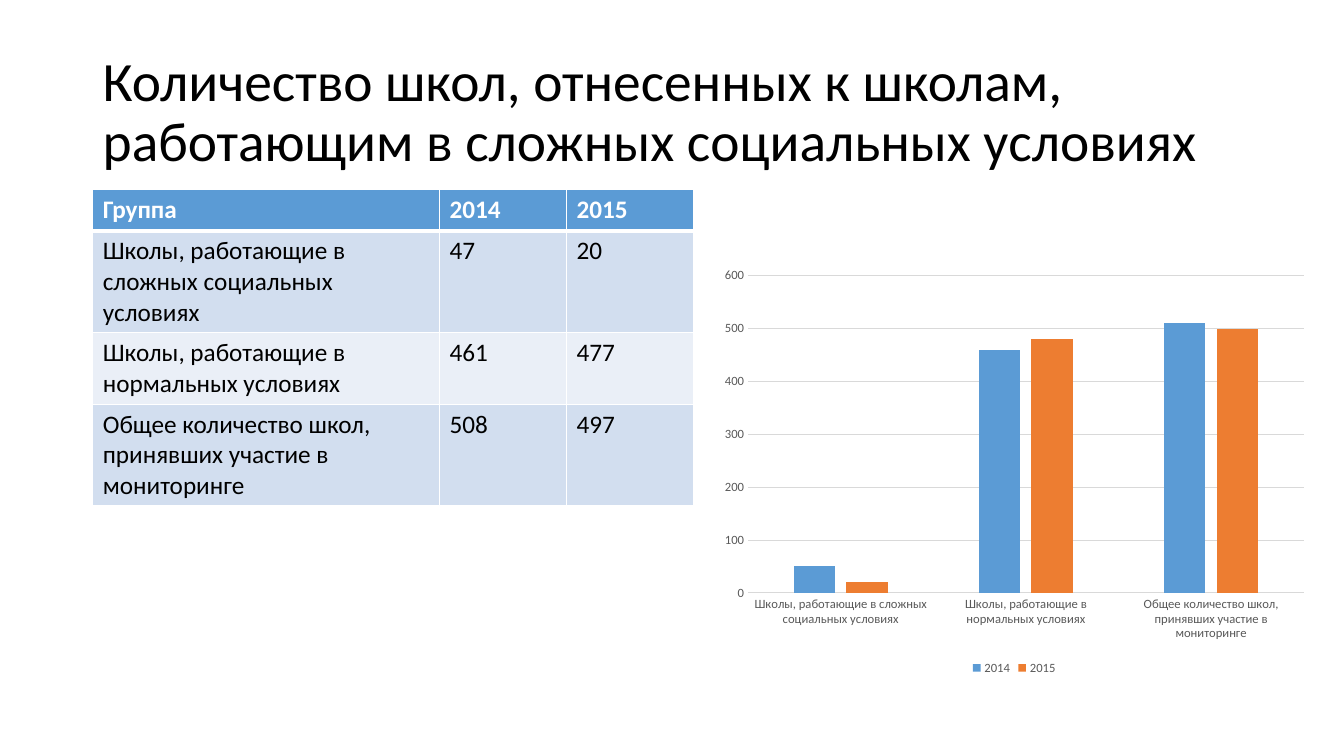
"""Build a slide with a table and a column chart of school counts by year."""
from lxml import etree
from pptx import Presentation
from pptx import util as u
from pptx.chart.data import CategoryChartData
from pptx.dml.color import RGBColor
from pptx.enum import chart as ch, text as tx
from pptx.oxml.ns import qn

FONT = "Calibri"
HEX = {"blue": "5B9BD5", "orange": "ED7D31", "band": "D2DEEF", "pale": "EAEFF7",
       "ink": "000000", "white": "FFFFFF", "gray": "595959", "grid": "D9D9D9"}
TITLE = "Количество школ, отнесенных к школам, работающим в сложных социальных условиях"
HEAD = ("Группа", "2014", "2015")
DATA = [
    ("Школы, работающие в сложных социальных условиях", 47, 20),
    ("Школы, работающие в нормальных условиях", 461, 477),
    ("Общее количество школ, принявших участие в мониторинге", 508, 497),
]
WIDE, HIGH = 13.33, 7.5
LEFT = 0.92
COLS = (3.44, 1.26, 1.26)
ROWS = (0.41, 1.01, 0.71, 1.01)
CHART = (7.07, 2.58, 5.98, 4.16)


def rgb(name):
    return RGBColor.from_string(HEX[name])


def style(font, size, color, bold=False):
    font.name, font.size, font.bold = FONT, u.Pt(size), bold
    font.color.rgb = rgb(color)


def edge(cell, side, width):
    line = etree.SubElement(cell._tc.get_or_add_tcPr(), qn(f"a:ln{side}"), w=str(u.Pt(width)))
    fill = etree.SubElement(line, qn("a:solidFill"))
    etree.SubElement(fill, qn("a:srgbClr"), val=HEX["white"])


def add_title(slide):
    box = slide.shapes.add_textbox(*map(u.Inches, (LEFT, 0.4, WIDE - 2 * LEFT, 1.45)))
    frame = box.text_frame
    frame.word_wrap = True
    frame.vertical_anchor = tx.MSO_ANCHOR.MIDDLE
    frame.text = TITLE
    para = frame.paragraphs[0]
    para.line_spacing = 0.9
    style(para.runs[0].font, 39.6, "ink")


def add_grid(slide):
    area = map(u.Inches, (LEFT, 1.88, sum(COLS), sum(ROWS)))
    table = slide.shapes.add_table(len(ROWS), len(COLS), *area).table
    for col, width in zip(table.columns, COLS):
        col.width = u.Inches(width)
    for row, height in zip(table.rows, ROWS):
        row.height = u.Inches(height)
    for r, items in enumerate([HEAD, *DATA]):
        top = r == 0
        for c, item in enumerate(items):
            cell = table.cell(r, c)
            cell.text = str(item)
            style(cell.text_frame.paragraphs[0].runs[0].font, 18, "white" if top else "ink", top)
            for side in "LRTB":
                thick = (top and side == "B") or (r == 1 and side == "T")
                edge(cell, side, 3 if thick else 1)
            cell.fill.solid()
            cell.fill.fore_color.rgb = rgb("blue" if top else "band" if r % 2 else "pale")


def add_bars(slide):
    names, *years = zip(*DATA)
    data = CategoryChartData()
    data.categories = names
    for year, vals in zip(HEAD[1:], years):
        data.add_series(year, [round(val, -1) for val in vals])
    kind = ch.XL_CHART_TYPE.COLUMN_CLUSTERED
    chart = slide.shapes.add_chart(kind, *map(u.Inches, CHART), data).chart
    style(chart.font, 10, "ink")
    chart.has_title = False
    chart.has_legend = True
    chart.legend.position = ch.XL_LEGEND_POSITION.BOTTOM
    chart.legend.include_in_layout = False
    style(chart.legend.font, 9, "gray")
    plot = chart.plots[0]
    plot.gap_width, plot.overlap, plot.vary_by_categories = 219, -27, False
    for series, color in zip(plot.series, ("blue", "orange")):
        series.format.fill.solid()
        series.format.fill.fore_color.rgb = rgb(color)
    base, scale = chart.category_axis, chart.value_axis
    for axis in (base, scale):
        axis.major_tick_mark = axis.minor_tick_mark = ch.XL_TICK_MARK.NONE
        style(axis.tick_labels.font, 9, "gray")
    scale.minimum_scale, scale.maximum_scale, scale.major_unit = 0, 600, 100
    scale.format.line.fill.background()
    for line in (base.format.line, scale.major_gridlines.format.line):
        line.color.rgb = rgb("grid")
        line.width = u.Pt(0.75)


def main():
    deck = Presentation()
    deck.slide_width, deck.slide_height = u.Inches(WIDE), u.Inches(HIGH)
    slide = deck.slides.add_slide(deck.slide_layouts[6])
    add_title(slide)
    add_grid(slide)
    add_bars(slide)
    deck.save("out.pptx")


if __name__ == "__main__":
    main()
